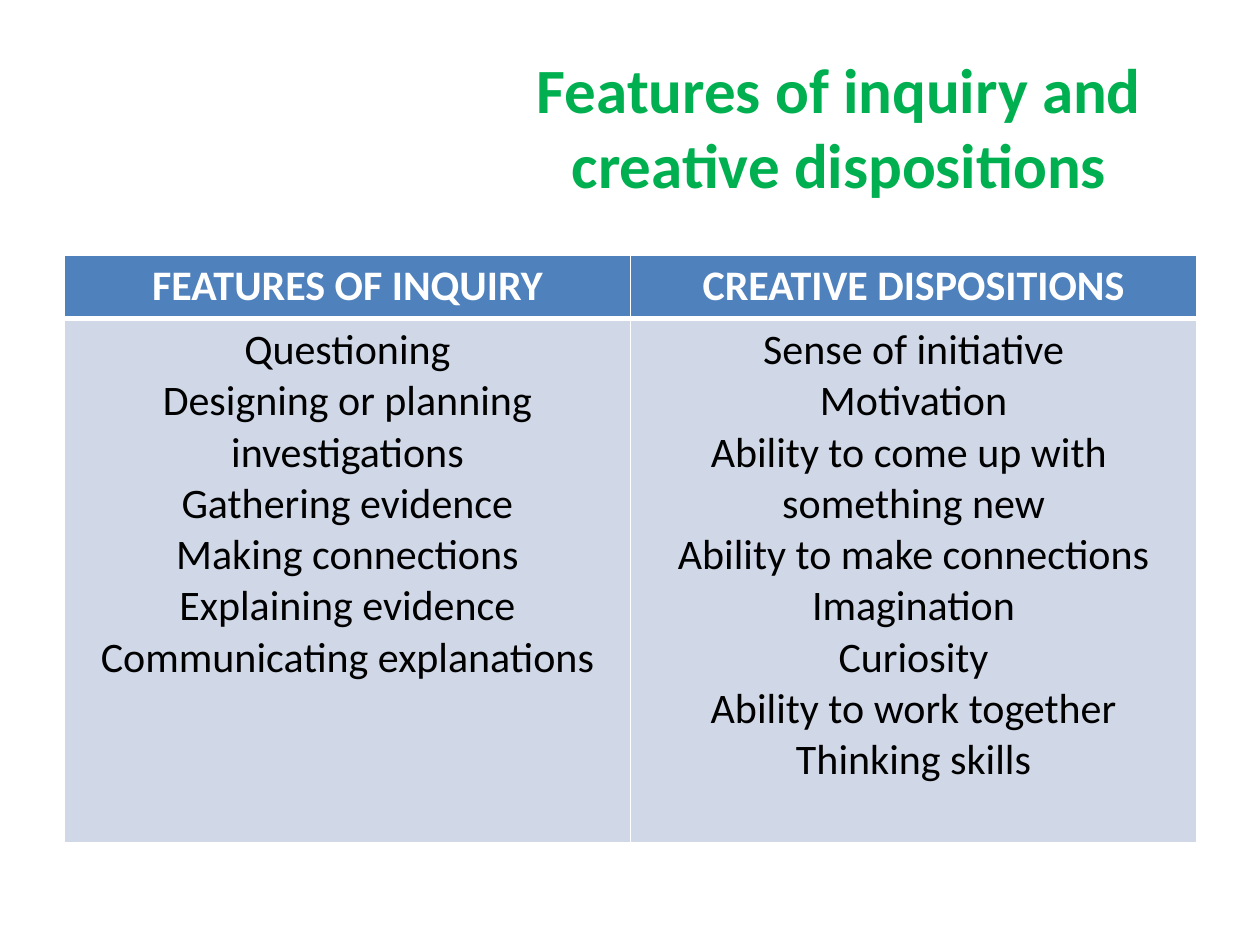
from pptx import Presentation
from pptx.dml.color import RGBColor
from pptx.enum.text import MSO_ANCHOR, PP_ALIGN
from pptx.oxml import parse_xml
from pptx.oxml.ns import nsdecls
from pptx.util import Pt


def color(value):
    return RGBColor.from_string(value)


class SlideBuilder:
    font_name = "Calibri"
    border_color = "FFFFFF"

    def __init__(self, slide):
        self.slide = slide

    def set_text(self, text_frame, lines, size, text_color, bold):
        text_frame.word_wrap = True
        text_frame.text = "\n".join(lines)
        for paragraph in text_frame.paragraphs:
            paragraph.alignment = PP_ALIGN.CENTER
            font = paragraph.font
            font.name, font.size, font.bold = self.font_name, Pt(size), bold
            font.color.rgb = color(text_color)

    def title(self, text, left, top, width, height):
        shape = self.slide.shapes.add_textbox(Pt(left), Pt(top), Pt(width), Pt(height))
        shape.text_frame.vertical_anchor = MSO_ANCHOR.MIDDLE
        self.set_text(shape.text_frame, [text], 36, "00B050", True)

    def border(self, cell, widths):
        # Borders stand before the fill in the cell properties
        properties = cell._tc.get_or_add_tcPr()
        for index, (side, width) in enumerate(widths.items()):
            properties.insert(index, parse_xml(
                f'<a:ln{side} {nsdecls("a")} w="{Pt(width)}"><a:solidFill>'
                f'<a:srgbClr val="{self.border_color}"/></a:solidFill></a:ln{side}>'))

    def cell(self, cell, lines, fill, text_color, bold, widths):
        cell.fill.solid()
        cell.fill.fore_color.rgb = color(fill)
        self.set_text(cell.text_frame, lines, 24, text_color, bold)
        self.border(cell, widths)

    def table(self, columns, left, top, width, header_height, body_height):
        frame = self.slide.shapes.add_table(
            2, len(columns), Pt(left), Pt(top), Pt(width), Pt(header_height + body_height))
        table = frame.table
        table.rows[0].height = Pt(header_height)
        table.rows[1].height = Pt(body_height)
        for index, (heading, items) in enumerate(columns.items()):
            table.columns[index].width = Pt(width / len(columns))
            self.cell(table.cell(0, index), [heading], "4F81BD", "FFFFFF", True,
                      {"L": 1, "R": 1, "T": 1, "B": 3})
            self.cell(table.cell(1, index), items, "D0D8E8", "000000", False,
                      {"L": 1, "R": 1, "T": 3, "B": 1})


def main():
    presentation = Presentation()
    presentation.slide_width, presentation.slide_height = Pt(720), Pt(540)
    builder = SlideBuilder(presentation.slides.add_slide(presentation.slide_layouts[6]))

    # Title
    builder.title("Features of inquiry and creative dispositions", 275, 21.6, 409, 100.8)

    # Comparison table
    columns = {
        "FEATURES OF INQUIRY": [
            "Questioning",
            "Designing or planning investigations",
            "Gathering evidence",
            "Making connections",
            "Explaining evidence",
            "Communicating explanations",
        ],
        "CREATIVE DISPOSITIONS": [
            "Sense of initiative",
            "Motivation",
            "Ability to come up with \vsomething new",
            "Ability to make connections",
            "Imagination",
            "Curiosity",
            "Ability to work together",
            "Thinking skills",
        ],
    }
    builder.table(columns, 36.8, 145.6, 647, 36.4, 299.6)

    presentation.save("out.pptx")


if __name__ == "__main__":
    main()
